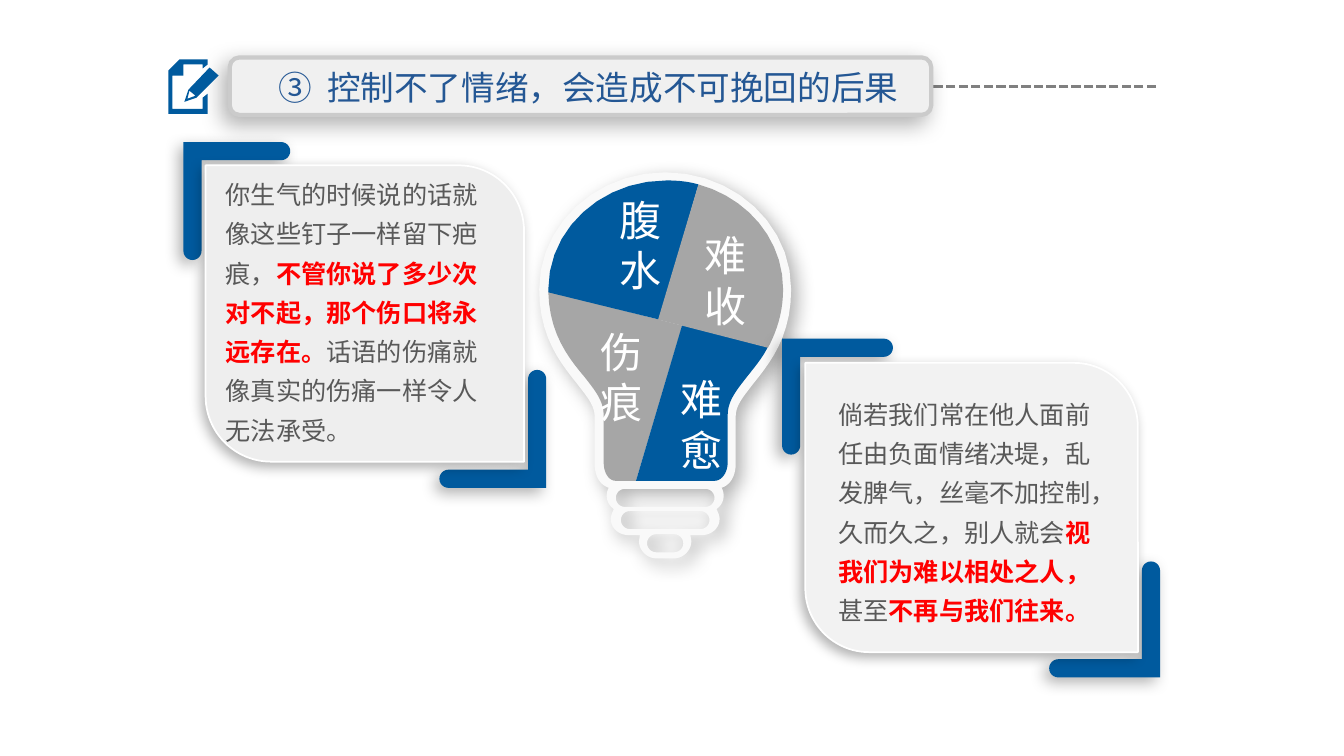
from dataclasses import dataclass
from math import cos, pi, sin

from lxml import etree
from pptx import Presentation
from pptx.dml.color import RGBColor
from pptx.enum.dml import MSO_LINE
from pptx.enum.shapes import MSO_CONNECTOR, MSO_SHAPE
from pptx.enum.text import PP_ALIGN
from pptx.oxml.ns import qn
from pptx.util import Cm, Pt

ROUND = MSO_SHAPE.ROUNDED_RECTANGLE
DIAG = MSO_SHAPE.ROUND_2_DIAG_RECTANGLE
STRAIGHT = MSO_CONNECTOR.STRAIGHT
DASH = MSO_LINE.SQUARE_DOT
LEFT, MID, RIGHT = PP_ALIGN.LEFT, PP_ALIGN.CENTER, PP_ALIGN.RIGHT


@dataclass(frozen=True)
class Theme:
    font: str = "Noto Sans CJK SC"
    blue: str = "005A9E"
    title: str = "245794"
    gray: str = "A6A6A6"
    rule: str = "808080"
    body: str = "595959"
    red: str = "FF0000"
    white: str = "FFFFFF"
    edge: str = "CBCBCB"
    bar: str = "F0F0F0"
    bulb: str = "F9F9F9"
    head_pt: int = 24
    word_pt: int = 30
    body_pt: int = 18


THEME = Theme()


def inch(val):
    return Cm(val * 2.54)


def color(code):
    return RGBColor.from_string(code)


def shade(shape, blur=0, dist=0, angle=135):
    shape.shadow.inherit = False
    if blur:
        effects = shape.element.spPr.find(qn("a:effectLst"))
        outer = etree.SubElement(effects, qn("a:outerShdw"), blurRad=str(Pt(blur)),
                                 dist=str(Pt(dist)), dir=str(angle * 60000),
                                 algn="ctr", rotWithShape="0")
        tint = etree.SubElement(outer, qn("a:srgbClr"), val="000000")
        etree.SubElement(tint, qn("a:alpha"), val="30000")


def paint(shape, fill, line=None, width=1, shadow=()):
    shape.fill.solid()
    shape.fill.fore_color.rgb = color(fill)
    if line:
        shape.line.color.rgb = color(line)
        shape.line.width = Pt(width)
    else:
        shape.line.fill.background()
    shade(shape, *shadow)


def box(slide, kind, place, fill, line, width, shadow, adjust=()):
    shape = slide.shapes.add_shape(kind, *map(inch, place))
    for num, val in enumerate(adjust):
        shape.adjustments[num] = val
    paint(shape, fill, line, width, shadow)


def text(slide, place, *parts, size, tint, align=LEFT, space=1.0):
    frame = slide.shapes.add_textbox(*map(inch, place)).text_frame
    frame.word_wrap = True
    para = frame.paragraphs[0]
    para.alignment = align
    para.line_spacing = space
    for num, part in enumerate(parts):
        run = para.add_run()
        run.text = part
        font = run.font
        font.name, font.size = THEME.font, Pt(size)
        font.bold = num % 2 == 1
        font.color.rgb = color(THEME.red if font.bold else tint)
        east = etree.SubElement(run._r.get_or_add_rPr(), qn("a:ea"))
        east.set("typeface", THEME.font)


def trace(start, *parts, steps=10):
    points = [start]
    for part in parts:
        if len(part) == 2:
            points.append(part)
            continue
        a, b, c, d = points[-1], part[:2], part[2:4], part[4:]
        for step in range(1, steps + 1):
            t = step / steps
            u = 1 - t
            points.append(tuple(
                u**3 * p + 3 * u * u * t * q + 3 * u * t * t * r + t**3 * s
                for p, q, r, s in zip(a, b, c, d)))
    return points


def arc(x, y, rad, start, sweep=pi, steps=12):
    angles = [start + sweep * step / steps for step in range(steps + 1)]
    return [(x + rad * cos(a), y + rad * sin(a)) for a in angles]


def outline(slide, loops, fill, shadow=()):
    build = None
    for loop in loops:
        points = [(inch(x), inch(y)) for x, y in loop]
        if build is None:
            build = slide.shapes.build_freeform(*points[0])
        else:
            build.move_to(*points[0])
        build.add_line_segments(points[1:], close=True)
    paint(build.convert_to_shape(), fill, shadow=shadow)


def corner(slide, x, y, wide, high, sign):
    rad = 0.09
    points = [(0, 0), *arc(wide - rad, rad, rad, -pi / 2), (2 * rad, 2 * rad),
              *arc(rad, high - rad, rad, 0)]
    outline(slide, [[(x + sign * a, y + sign * b) for a, b in points]],
            THEME.blue, (11, 5))


def card(slide, place, fill, start, end, arms):
    corner(slide, *end, *arms, -1)
    corner(slide, *start, *arms, 1)
    box(slide, DIAG, place, fill, THEME.white, 1.25, (9, 4), (0, 0.221))


def header(slide):
    rule = slide.shapes.add_connector(STRAIGHT, *map(inch, (11.47, 0.86, 4.66, 0.86)))
    rule.line.color.rgb = color(THEME.rule)
    rule.line.width = Pt(2.25)
    rule.line.dash_style = DASH
    etree.SubElement(rule.element.spPr, qn("a:effectLst"))
    box(slide, ROUND, (2.28, 0.57, 6.96, 0.57), THEME.bar, THEME.edge, 3, (16, 7))
    text(slide, (2.53, 0.61, 6.48, 0.5), "③  控制不了情绪，会造成不可挽回的后果",
         size=THEME.head_pt, tint=THEME.title, align=RIGHT)
    page = [(2.01, 1.08), (1.71, 1.08), (1.71, 0.75), (1.82, 0.75), (1.82, 0.64),
            (2.01, 0.64), (2.01, 0.68), (2.06, 0.64), (2.06, 0.59), (1.78, 0.59),
            (1.67, 0.7), (1.67, 1.13), (2.06, 1.13), (2.06, 0.93), (2.01, 0.97)]
    pen = [(1.87, 0.89), (1.83, 1.01), (1.95, 0.97), (2.17, 0.75), (2.08, 0.67)]
    tip = [(1.94, 0.95), (1.86, 0.98), (1.88, 0.9)]
    outline(slide, [page], THEME.blue)
    outline(slide, [pen, tip], THEME.blue)


def bulb(slide):
    mid = 6.6
    half = trace(
        (mid, 1.71), (7.29, 1.71, 7.85, 2.23, 7.85, 2.87),
        (7.85, 3.34, 7.64, 3.6, 7.48, 3.8), (7.38, 3.93, 7.3, 4.02, 7.3, 4.13),
        (7.3, 4.6), (7.3, 4.72, 7.25, 4.81, 7.16, 4.84),
        (7.17, 4.86, 7.18, 4.88, 7.18, 4.92), (7.18, 4.98, 7.15, 5.02, 7.11, 5.05),
        (7.12, 5.08, 7.14, 5.11, 7.14, 5.15), (7.14, 5.24, 7.06, 5.31, 6.96, 5.31),
        (6.85, 5.31), (6.86, 5.37), (6.86, 5.46, 6.78, 5.54, 6.69, 5.54), (mid, 5.54))
    glass = half + [(2 * mid - x, y) for x, y in reversed(half)]
    slots = [arc(mid - reach, y, 0.09, -pi / 2, -pi) + arc(mid + reach, y, 0.09, pi / 2, -pi)
             for reach, y in ((0.4, 4.94), (0.35, 5.16), (0.09, 5.39))]
    outline(slide, [glass, *slots], THEME.bulb, (13, 6, 45))

    wedges = [
        (THEME.gray, trace((5.44, 2.89), (5.45, 3.31, 5.64, 3.55, 5.8, 3.74),
                           (5.91, 3.88, 5.99, 3.98, 5.99, 4.12), (5.99, 4.59),
                           (5.99, 4.69, 6.04, 4.77, 6.11, 4.77), (6.31, 4.77), (6.77, 3.23))),
        (THEME.blue, trace((6.93, 1.83), (6.83, 1.8, 6.72, 1.79, 6.61, 1.79),
                           (5.97, 1.79, 5.44, 2.27, 5.44, 2.87), (5.44, 2.9), (6.54, 3.17))),
        (THEME.blue, trace((6.77, 3.22), (6.31, 4.77), (7.09, 4.77),
                           (7.16, 4.77, 7.22, 4.69, 7.22, 4.59), (7.22, 4.12),
                           (7.22, 3.98, 7.3, 3.88, 7.41, 3.74),
                           (7.48, 3.65, 7.56, 3.56, 7.62, 3.44))),
        (THEME.gray, trace((6.93, 1.83), (6.53, 3.17), (7.62, 3.45),
                           (7.7, 3.3, 7.77, 3.11, 7.77, 2.87),
                           (7.77, 2.37, 7.41, 1.96, 6.93, 1.83))),
    ]
    for fill, points in wedges:
        outline(slide, [points], fill)
    words = [("腹水", 5.93, 1.88), ("伤痕", 5.74, 3.19),
             ("难收", 6.77, 2.23), ("难愈", 6.53, 3.66)]
    for word, x, y in words:
        text(slide, (x, y, 0.85, 1.11), word, size=THEME.word_pt,
             tint=THEME.white, align=MID)


def main():
    deck = Presentation()
    deck.slide_width, deck.slide_height = Cm(33.87), Cm(19.05)
    slide = deck.slides.add_slide(deck.slide_layouts[6])
    header(slide)
    bulb(slide)
    card(slide, (7.99, 3.6, 3.3, 2.87), "F2F2F2", (7.76, 3.36), (11.51, 6.72), (1.1, 1.15))
    card(slide, (2.04, 1.64, 3.16, 2.94), "EEEEEE", (1.82, 1.41), (5.42, 4.84), (1.06, 1.17))
    style = dict(size=THEME.body_pt, tint=THEME.body, space=1.3)
    text(slide, (2.14, 1.64, 2.92, 2.85),
         "你生气的时候说的话就像这些钉子一样留下疤痕，",
         "不管你说了多少次对不起，那个伤口将永远存在。",
         "话语的伤痛就像真实的伤痛一样令人无法承受。", **style)
    text(slide, (8.22, 3.82, 2.74, 2.46),
         "倘若我们常在他人面前任由负面情绪决堤，乱发脾气，丝毫不加控制，久而久之，别人就会",
         "视我们为难以相处之人，", "甚至", "不再与我们往来。", **style)
    deck.save("out.pptx")


if __name__ == "__main__":
    main()
